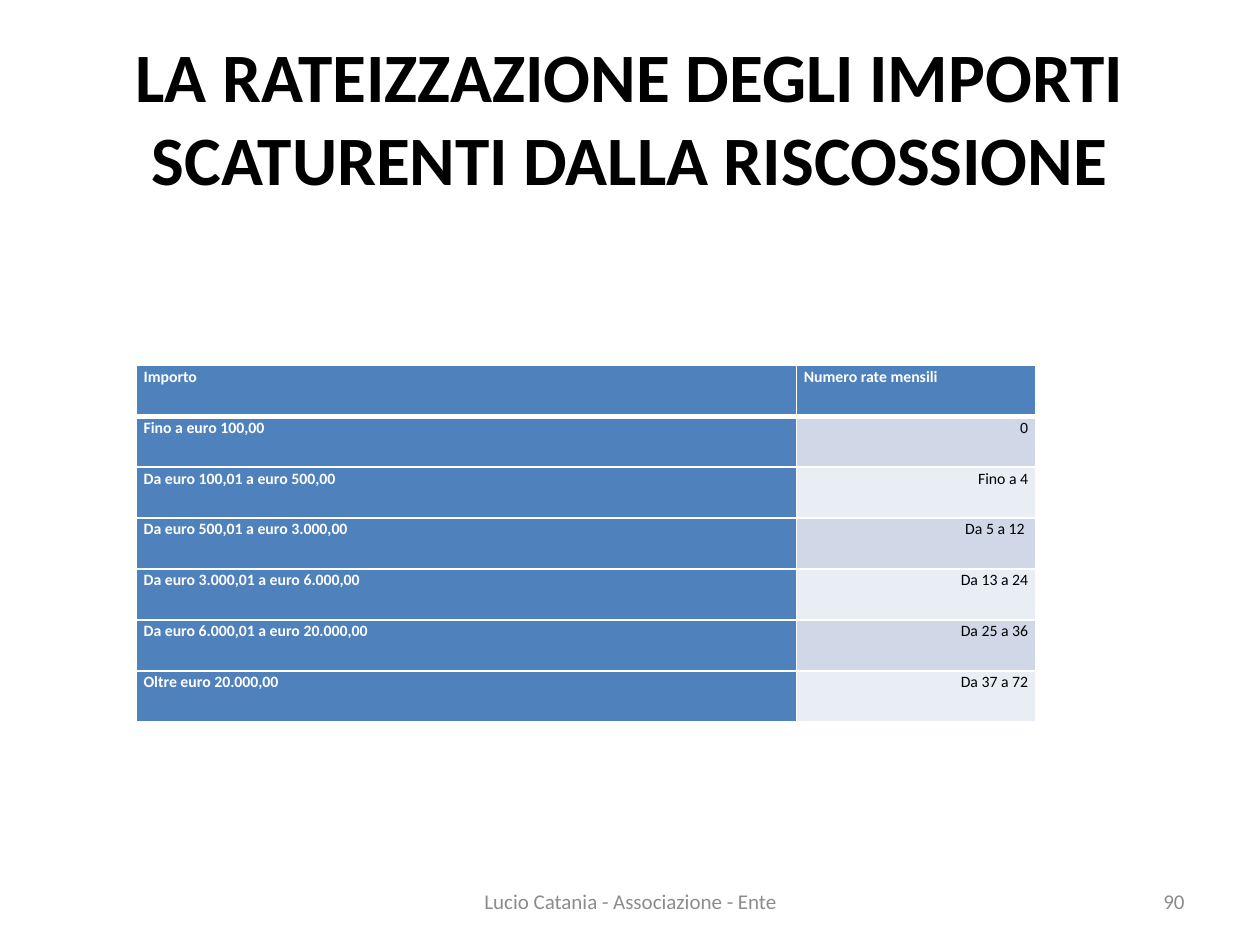
"""Build the slide on paying collected amounts by instalments."""
from typing import NamedTuple

from lxml.etree import SubElement
from pptx import Presentation
from pptx.dml.color import RGBColor
from pptx.enum.text import MSO_ANCHOR as Anchor, MSO_AUTO_SIZE as AutoSize, PP_ALIGN as Align
from pptx.oxml.ns import qn
from pptx.util import Inches, Pt

FONT = "Calibri"
COLORS = {
    "black": "000000",
    "white": "FFFFFF",
    "grey": "8C8C8C",
    "blue": "4F81BD",
    "band_dark": "D0D8E8",
    "band_light": "E9EDF4",
}


class Instalment(NamedTuple):
    amount: str
    count: str


class FooterItem(NamedTuple):
    text: str
    left: float
    width: float
    align: Align


HEADER = Instalment("Importo", "Numero rate mensili")
INSTALMENTS = [
    Instalment("Fino a euro 100,00", "0"),
    Instalment("Da euro 100,01 a euro 500,00", "Fino a 4"),
    Instalment("Da euro 500,01 a euro 3.000,00", "Da 5 a 12 "),
    Instalment("Da euro 3.000,01 a euro 6.000,00", "Da 13 a 24"),
    Instalment("Da euro 6.000,01 a euro 20.000,00", "Da 25 a 36"),
    Instalment("Oltre euro 20.000,00", "Da 37 a 72"),
]
FOOTER = [
    FooterItem("Lucio Catania - Associazione - Ente", 3.42, 3.17, Align.CENTER),
    FooterItem("90", 7.17, 2.33, Align.RIGHT),
]


def write_text(frame, text: str, *, size: float, color: str, bold: bool = False,
               align: Align = Align.LEFT, spacing: float = 1.0) -> None:
    """Fill a text frame with one formatted paragraph."""
    frame.word_wrap = True
    paragraph = frame.paragraphs[0]
    paragraph.alignment = align
    paragraph.line_spacing = spacing
    run = paragraph.add_run()
    run.text = text
    run.font.name = FONT
    run.font.size = Pt(size)
    run.font.bold = bold
    run.font.color.rgb = RGBColor.from_string(COLORS[color])


def set_borders(cell, *, top: float = 1, bottom: float = 1) -> None:
    """Give a cell white borders, with widths in points."""
    properties = cell._tc.get_or_add_tcPr()
    for side, width in {"L": 1, "R": 1, "T": top, "B": bottom}.items():
        line = SubElement(properties, qn(f"a:ln{side}"), w=str(Pt(width)))
        fill = SubElement(line, qn("a:solidFill"))
        SubElement(fill, qn("a:srgbClr"), val=COLORS["white"])


def fill_cell(cell, text: str, *, fill: str, color: str, bold: bool,
              align: Align, top: float, bottom: float) -> None:
    """Write and style one table cell."""
    cell.margin_left = cell.margin_right = Inches(0.06)
    cell.margin_top = cell.margin_bottom = 0
    set_borders(cell, top=top, bottom=bottom)
    cell.fill.solid()
    cell.fill.fore_color.rgb = RGBColor.from_string(COLORS[fill])
    write_text(cell.text_frame, text, size=9, color=color, bold=bold, align=align, spacing=1.1)


def add_title(slide, text: str) -> None:
    """Place and fill the title placeholder."""
    title = slide.shapes.title
    title.left, title.top, title.width, title.height = map(Inches, (0.5, 0.3, 9, 1.25))
    title.text_frame.auto_size = AutoSize.NONE
    title.text_frame.vertical_anchor = Anchor.MIDDLE
    write_text(title.text_frame, text, size=39.6, color="black", bold=True, align=Align.CENTER)


def add_instalment_table(slide, rows: list[Instalment]) -> None:
    """Draw the table of amounts and monthly instalments."""
    table = slide.shapes.add_table(
        len(rows), 2, Inches(1.08), Inches(2.9), Inches(7.14), Inches(2.83)).table
    for column, width in zip(table.columns, (5.24, 1.9)):
        column.width = Inches(width)
    for row_index, row in enumerate(rows):
        for column_index, text in enumerate(row):
            heading = row_index == 0 or column_index == 0
            band = "band_dark" if row_index % 2 else "band_light"
            fill_cell(
                table.cell(row_index, column_index), text,
                fill="blue" if heading else band,
                color="white" if heading else "black",
                bold=heading,
                align=Align.LEFT if heading else Align.RIGHT,
                top=3 if row_index == 1 else 1,
                bottom=3 if row_index == 0 else 1)


def add_footer_item(slide, item: FooterItem) -> None:
    """Draw one grey text at the foot of the slide."""
    box = slide.shapes.add_textbox(
        Inches(item.left), Inches(6.95), Inches(item.width), Inches(0.4))
    box.text_frame.vertical_anchor = Anchor.MIDDLE
    write_text(box.text_frame, item.text, size=12, color="grey", align=item.align)


def main() -> None:
    """Build and save the presentation."""
    presentation = Presentation()
    presentation.slide_width, presentation.slide_height = Inches(10), Inches(7.5)
    slide = presentation.slides.add_slide(presentation.slide_layouts[5])
    add_title(slide, "LA RATEIZZAZIONE DEGLI IMPORTI SCATURENTI DALLA RISCOSSIONE")
    add_instalment_table(slide, [HEADER, *INSTALMENTS])
    for item in FOOTER:
        add_footer_item(slide, item)
    presentation.save("out.pptx")


if __name__ == "__main__":
    main()
